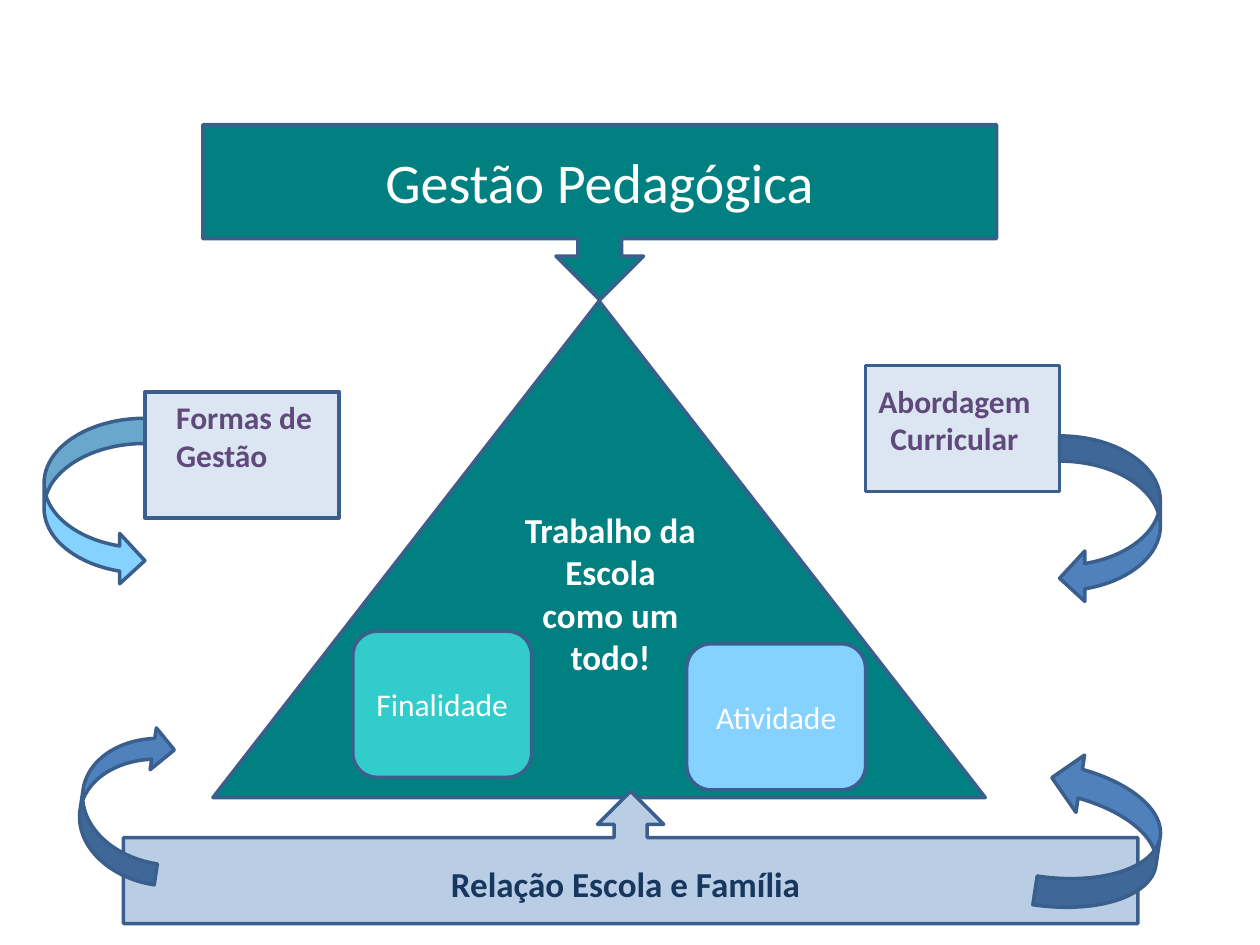
"""Build the pedagogical management slide on a grid of 100 columns by 75 rows."""
from dataclasses import dataclass
from typing import Optional

from pptx import Presentation
from pptx import util as u
from pptx.dml.color import RGBColor
from pptx.enum import shapes, text
from pptx.oxml import parse_xml
from pptx.oxml.ns import nsdecls, qn

COLUMNS, ROWS = 100, 75
CELL = u.Inches(0.1)

TEAL = RGBColor(0x00, 0x80, 0x80)
TURQUOISE = RGBColor(0x33, 0xCC, 0xCC)
SKY = RGBColor(0x85, 0xD1, 0xFF)
BLUE = RGBColor(0x4F, 0x81, 0xBD)
PALE_BLUE = RGBColor(0xDC, 0xE6, 0xF2)
LIGHT_BLUE = RGBColor(0xB9, 0xCD, 0xE5)
OUTLINE = RGBColor(0x3A, 0x5F, 0x8C)
PURPLE = RGBColor(0x60, 0x4A, 0x7B)
NAVY = RGBColor(0x17, 0x37, 0x5E)
WHITE = RGBColor(0xFF, 0xFF, 0xFF)

KIND = shapes.MSO_SHAPE
LEFT, CENTER = text.PP_ALIGN.LEFT, text.PP_ALIGN.CENTER
TOP, MIDDLE = text.MSO_ANCHOR.TOP, text.MSO_ANCHOR.MIDDLE


@dataclass(frozen=True)
class Area:
    """A rectangle measured in grid columns and rows."""
    column: float
    row: float
    columns: float
    rows: float

    def lengths(self) -> list[int]:
        """Return left, top, width and height as slide lengths."""
        return [round(cells * CELL) for cells in (self.column, self.row, self.columns, self.rows)]


@dataclass(frozen=True)
class Label:
    """Wording with its text format."""
    wording: str
    size: int
    color: RGBColor = WHITE
    bold: bool = False
    alignment: text.PP_ALIGN = CENTER
    anchor: text.MSO_ANCHOR = MIDDLE


@dataclass(frozen=True)
class Figure:
    """A preset shape, or a plain text box when it has no kind."""
    area: Area
    kind: Optional[shapes.MSO_SHAPE] = None
    fill: Optional[RGBColor] = None
    label: Optional[Label] = None
    rotation: float = 0
    flipped: bool = False


TITLE_AREA = Area(16.1, 9.9, 63, 9)
TITLE = Label("Gestão Pedagógica", 32)

BOX, ARROW_TILT = (15.4, 10), 278.5
CARD, SIDE_ARROW = (14.2, 11.6), (8, 13.3)

CALLOUT = Figure(Area(16.1, 9.9, 63, 13.9), KIND.DOWN_ARROW_CALLOUT, TEAL)
FIGURES = [
    Figure(Area(16.9, 23.9, 61.3, 39.4), KIND.ISOSCELES_TRIANGLE, TEAL),
    Figure(Area(40.6, 39.9, 15.7, 14.5),
           label=Label("Trabalho da Escola como um todo!", 20, bold=True, anchor=TOP)),
    Figure(Area(28, 50.1, *CARD), KIND.ROUNDED_RECTANGLE, TURQUOISE, Label("Finalidade", 18)),
    Figure(Area(54.5, 51.1, *CARD), KIND.ROUNDED_RECTANGLE, SKY, Label("Atividade", 18)),
    Figure(Area(3.5, 33.2, *SIDE_ARROW), KIND.CURVED_RIGHT_ARROW, SKY),
    Figure(Area(11.5, 31.1, *BOX), KIND.RECTANGLE, PALE_BLUE),
    Figure(Area(13, 31.1, 13.9, 7.1),
           label=Label("Formas de Gestão", 18, PURPLE, True, LEFT, TOP)),
    Figure(Area(68.7, 29, *BOX), KIND.RECTANGLE, PALE_BLUE),
    Figure(Area(84.1, 34.6, *SIDE_ARROW), KIND.CURVED_LEFT_ARROW, BLUE),
    Figure(Area(68.7, 29.8, 14.1, 7.1),
           label=Label("Abordagem Curricular", 18, PURPLE, True, anchor=TOP)),
    Figure(Area(9.8, 62.8, 80.5, 10.5), KIND.UP_ARROW_CALLOUT, LIGHT_BLUE),
    Figure(Area(19, 68, 61.3, 4.4),
           label=Label("Relação Escola e Família", 20, NAVY, True, anchor=TOP)),
    Figure(Area(81.2, 61.7, 12.5, 9.2), KIND.CURVED_UP_ARROW, BLUE, rotation=ARROW_TILT),
    Figure(Area(3.6, 60.2, 12.5, 6.7), KIND.CURVED_UP_ARROW, BLUE,
           rotation=ARROW_TILT, flipped=True),
]


def apply_format(target: object, values: dict[str, object]) -> None:
    """Set every attribute named in the format values."""
    for name, value in values.items():
        setattr(target, name, value)


def write_label(shape, label: Label) -> None:
    """Write one formatted paragraph into a shape."""
    frame = shape.text_frame
    apply_format(frame, {"word_wrap": True, "auto_size": text.MSO_AUTO_SIZE.NONE,
                         "vertical_anchor": label.anchor})
    paragraph = frame.paragraphs[0]
    paragraph.alignment = label.alignment
    run = paragraph.add_run()
    run.text = label.wording
    apply_format(run.font, {"name": "Calibri", "size": u.Pt(label.size), "bold": label.bold})
    run.font.color.rgb = label.color


def draw_figure(slide, figure: Figure):
    """Draw one figure and return its shape."""
    lengths = figure.area.lengths()
    if figure.kind is None:
        shape = slide.shapes.add_textbox(*lengths)
    else:
        shape = slide.shapes.add_shape(figure.kind, *lengths)
        shape.shadow.inherit = False
        shape.fill.solid()
        shape.fill.fore_color.rgb = figure.fill
        shape.line.color.rgb = OUTLINE
        apply_format(shape.line, {"width": u.Pt(2)})
        shape.rotation = figure.rotation
    if figure.flipped:
        shape.element.spPr.find(qn("a:xfrm")).set("flipV", "1")
    if figure.label:
        write_label(shape, figure.label)
    return shape


def place_title(slide, callout) -> None:
    """Move the title placeholder onto the body of the callout."""
    title = slide.shapes.title
    names = ("left", "top", "width", "height")
    apply_format(title, dict(zip(names, TITLE_AREA.lengths())))
    write_label(title, TITLE)
    callout.element.addnext(title.element)


def main() -> None:
    """Build and save the presentation."""
    presentation = Presentation()
    apply_format(presentation, {"slide_width": COLUMNS * CELL, "slide_height": ROWS * CELL})
    slide = presentation.slides.add_slide(presentation.slide_layouts.get_by_name("Title Only"))
    place_title(slide, draw_figure(slide, CALLOUT))
    for figure in FIGURES:
        draw_figure(slide, figure)
    presentation.save("out.pptx")


if __name__ == "__main__":
    main()
